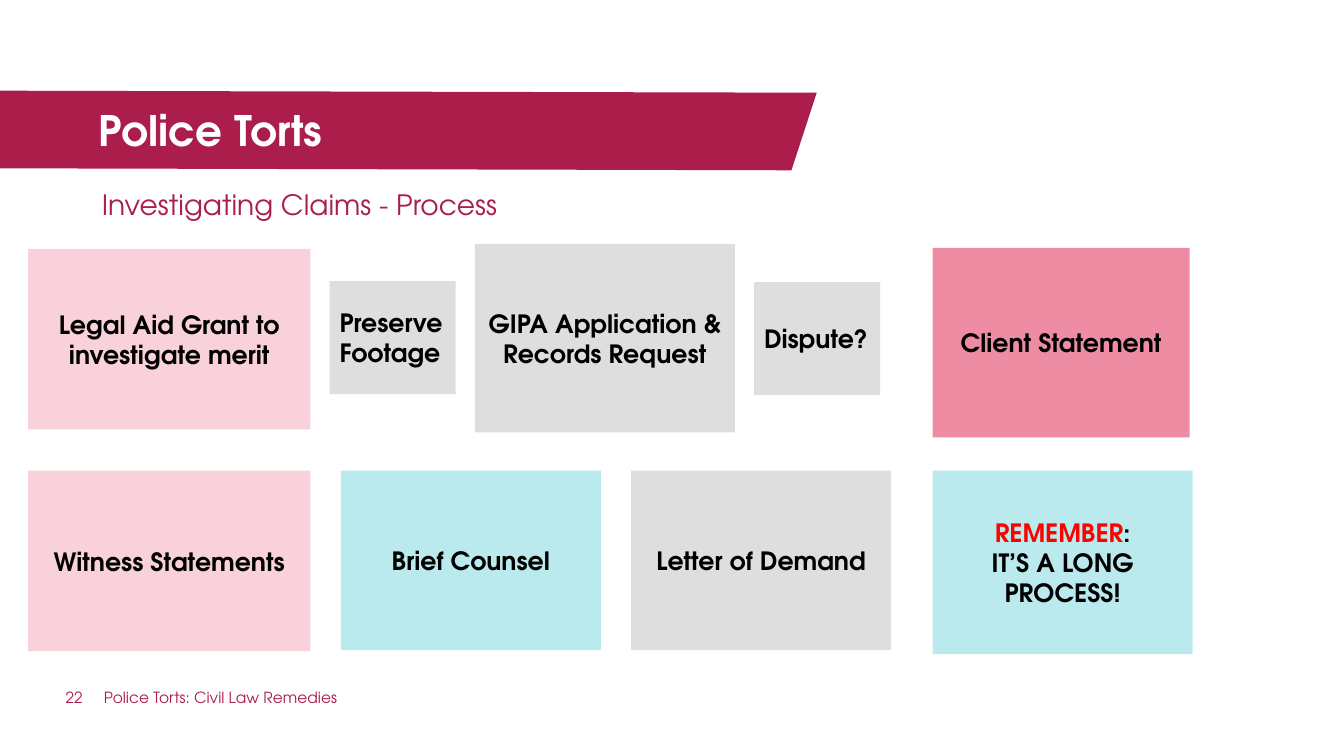
from dataclasses import dataclass

from pptx import Presentation
from pptx.dml.color import RGBColor
from pptx.enum.shapes import MSO_SHAPE as Preset
from pptx.enum.text import MSO_ANCHOR as Anchor, MSO_AUTO_SIZE as AutoSize, PP_ALIGN as Align
from pptx.util import Inches, Pt

SLIDE_WIDTH, SLIDE_HEIGHT = Inches(13.33), Inches(7.5)
FONT = "TeX Gyre Adventor"
CRIMSON, PINK, ROSE = "AB1E4B", "F8D1DA", "ED8CA3"
AQUA, GREY = "BAEAEE", "DEDEDE"
BLACK, WHITE, RED = "000000", "FFFFFF", "FF0000"
STEP_WIDTH, WIDE_STEP, SMALL_STEP = 19.35, 21, 9.38
FIRST_COLUMN, LAST_COLUMN = 2.1, 69.39
LOWER_ROW, FOOTER_ROW = 62.27, 91.07
BANNER_OUTLINE = [(0, 12), (60.77, 12.27), (58.89, 22.53), (0, 22.27)]


@dataclass(frozen=True)
class Region:
    """A place on the slide, in percent of its width and height."""
    left: float
    top: float
    width: float
    height: float

    def box(self) -> tuple[int, int, int, int]:
        """Return left, top, width and height in slide units."""
        return (*point(self.left, self.top), *point(self.width, self.height))


@dataclass(frozen=True)
class Words:
    """A run of text with its look."""
    text: str
    size: int = 18
    color: str = BLACK
    bold: bool = True


@dataclass(frozen=True)
class Step:
    """A block of the claims process; each line is a list of runs."""
    region: Region
    fill: str
    lines: list[list[Words]]
    align: Align = Align.CENTER


STEPS = [
    Step(Region(FIRST_COLUMN, 32.93, WIDE_STEP, 23.87), PINK,
         [[Words("Legal Aid Grant to investigate merit")]]),
    Step(Region(24.53, 37.2, SMALL_STEP, 14.93), GREY,
         [[Words("Preserve Footage")]], Align.JUSTIFY),
    Step(Region(35.33, 32.27, STEP_WIDTH, 24.93), GREY,
         [[Words("GIPA Application &")], [Words("Records Request")]]),
    Step(Region(56.11, 37.33, SMALL_STEP, 14.93), GREY,
         [[Words("Dispute?")]], Align.JUSTIFY),
    Step(Region(LAST_COLUMN, 32.8, 19.13, 25.07), ROSE,
         [[Words("Client Statement")]]),
    Step(Region(FIRST_COLUMN, LOWER_ROW, WIDE_STEP, 23.87), PINK,
         [[Words("Witness Statements")]]),
    Step(Region(25.36, LOWER_ROW, STEP_WIDTH, 23.73), AQUA,
         [[Words("Brief Counsel")]]),
    Step(Region(46.96, LOWER_ROW, STEP_WIDTH, 23.73), GREY,
         [[Words("Letter of Demand")]]),
    Step(Region(LAST_COLUMN, LOWER_ROW, STEP_WIDTH, 24.27), AQUA,
         [[Words("REMEMBER", color=RED), Words(":")],
          [Words("IT’S A LONG PROCESS!")]]),
]

FOOTERS = [
    (Region(4.88, FOOTER_ROW, 2.78, 4.67), "22"),
    (Region(7.73, FOOTER_ROW, 46.06, 4.67), "Police Torts: Civil Law Remedies"),
]


def point(across: float, down: float) -> tuple[int, int]:
    """Turn percentages of the slide into slide units."""
    return round(SLIDE_WIDTH * across / 100), round(SLIDE_HEIGHT * down / 100)


def rgb(value: str) -> RGBColor:
    """Return the colour for a hex string."""
    return RGBColor.from_string(value)


def paint(shape, color: str) -> None:
    """Give a shape a flat fill without line or shadow."""
    shape.fill.solid()
    shape.fill.fore_color.rgb = rgb(color)
    shape.line.fill.background()
    shape.shadow.inherit = False


def write(frame, lines: list[list[Words]], align: Align, anchor: Anchor) -> None:
    """Write lines of runs into a text frame."""
    frame.word_wrap = True
    frame.auto_size = AutoSize.NONE
    frame.vertical_anchor = anchor
    for index, line in enumerate(lines):
        paragraph = frame.add_paragraph() if index else frame.paragraphs[0]
        paragraph.alignment = align
        paragraph.space_before = Pt(0)
        for words in line:
            run = paragraph.add_run()
            run.text = words.text
            run.font.name = FONT
            run.font.size = Pt(words.size)
            run.font.bold = words.bold
            run.font.color.rgb = rgb(words.color)


def place_text(holder, region: Region, words: Words) -> None:
    """Position a text holder without margins and write one line in it."""
    holder.left, holder.top, holder.width, holder.height = region.box()
    frame = holder.text_frame
    frame.margin_left = frame.margin_top = frame.margin_right = frame.margin_bottom = 0
    write(frame, [[words]], Align.LEFT, Anchor.TOP)


def draw_banner(slide) -> None:
    """Draw the slanted band behind the title."""
    corners = [point(*corner) for corner in BANNER_OUTLINE]
    outline = slide.shapes.build_freeform(*corners[0])
    outline.add_line_segments(corners[1:], close=True)
    banner = outline.convert_to_shape()
    paint(banner, CRIMSON)
    slide.shapes.title.element.addprevious(banner.element)


def draw_step(slide, step: Step) -> None:
    """Draw one block of the process."""
    block = slide.shapes.add_shape(Preset.RECTANGLE, *step.region.box())
    paint(block, step.fill)
    write(block.text_frame, step.lines, step.align, Anchor.MIDDLE)


def main() -> None:
    """Build and save the slide."""
    deck = Presentation()
    deck.slide_width, deck.slide_height = SLIDE_WIDTH, SLIDE_HEIGHT
    slide = deck.slides.add_slide(deck.slide_layouts[0])
    draw_banner(slide)
    place_text(slide.shapes.title, Region(7.35, 13.87, 51.16, 6.53),
               Words("Police Torts", 30, WHITE))
    subtitle = slide.placeholders[1]
    place_text(subtitle, Region(7.58, 23.87, 81.55, 6.27),
               Words("Investigating Claims - Process", 20, CRIMSON, False))
    subtitle.text_frame.paragraphs[0].line_spacing = 1.2
    for region, text in FOOTERS:
        place_text(slide.shapes.add_textbox(*region.box()), region,
                   Words(text, 11, CRIMSON, False))
    for step in STEPS:
        draw_step(slide, step)
    deck.save("out.pptx")


if __name__ == "__main__":
    main()
